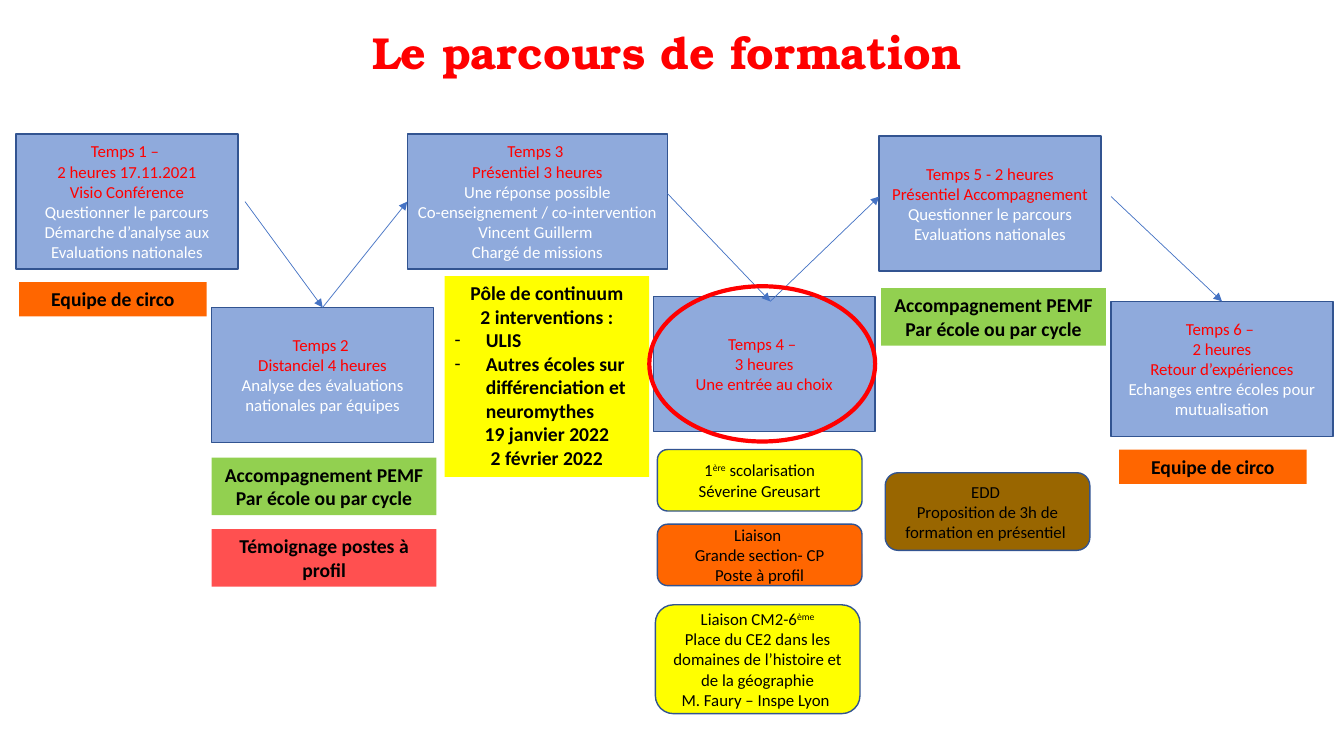
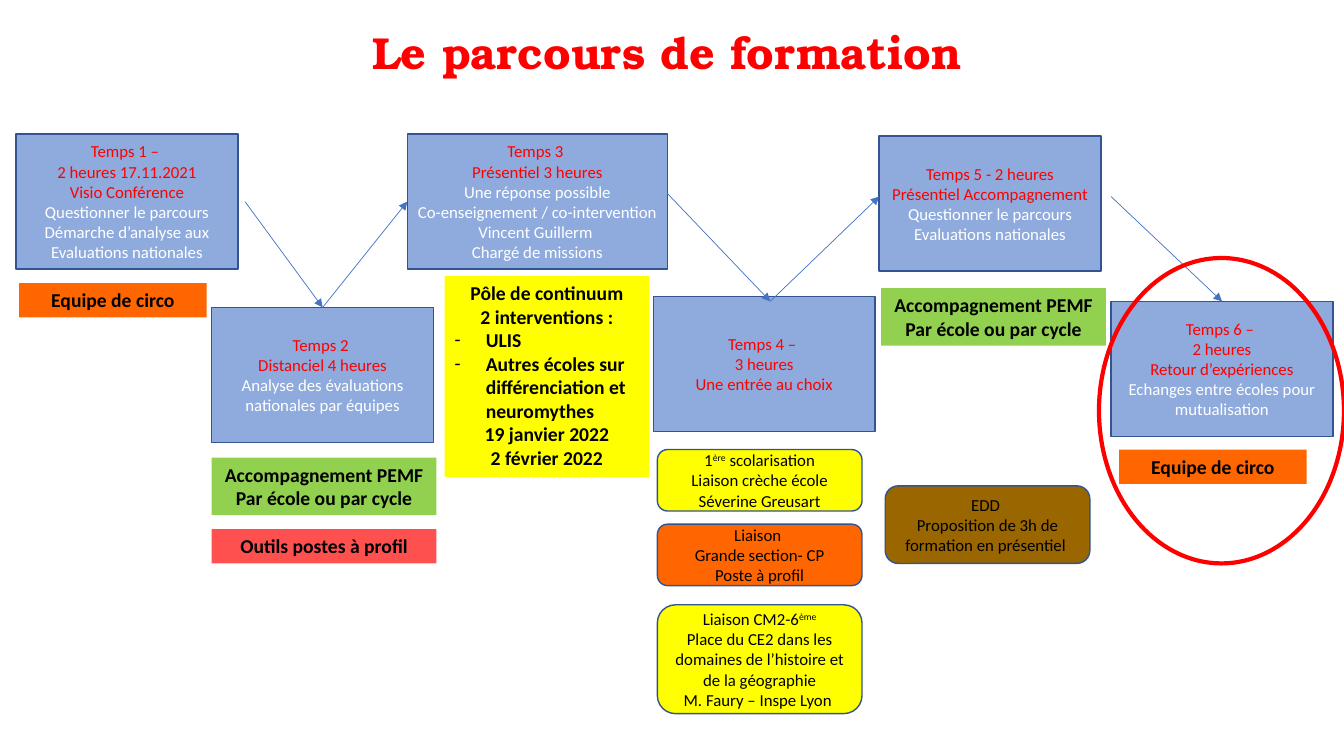
from dataclasses import dataclass

from lxml import etree
from pptx import Presentation
from pptx.dml.color import RGBColor
from pptx.enum.shapes import MSO_CONNECTOR, MSO_SHAPE
from pptx.enum.text import MSO_ANCHOR, MSO_AUTO_SIZE, PP_ALIGN
from pptx.oxml.ns import qn
from pptx.util import Inches, Pt

RECT, ROUNDED, OVAL = MSO_SHAPE.RECTANGLE, MSO_SHAPE.ROUNDED_RECTANGLE, MSO_SHAPE.OVAL
STRAIGHT = MSO_CONNECTOR.STRAIGHT
CENTER, LEFT = PP_ALIGN.CENTER, PP_ALIGN.LEFT
TOP, MIDDLE = MSO_ANCHOR.TOP, MSO_ANCHOR.MIDDLE
NO_AUTOFIT, GROW = MSO_AUTO_SIZE.NONE, MSO_AUTO_SIZE.SHAPE_TO_FIT_TEXT
TITLE_ONLY = 5


@dataclass(frozen=True)
class Theme:
    red: str = "FF0000"
    white: str = "FFFFFF"
    black: str = "000000"
    step: str = "8FAADC"
    outline: str = "325491"
    arrow: str = "4472C4"
    yellow: str = "FFFF00"
    orange: str = "FF6600"
    green: str = "92D050"
    coral: str = "FF5050"
    brown: str = "996600"
    title_font: str = "TeX Gyre Bonum"
    body_font: str = "Calibri"
    title_size: float = 32
    label_size: float = 14
    body_size: float = 12
    outline_width: float = 1
    arrow_width: float = 0.5
    highlight_width: float = 3


THEME = Theme()
TITLE = "Le parcours de formation"
TITLE_BOX = (0.87, 0.19, 11.5, 0.72)
STEP_WIDTH, STEP_HEIGHT = 2.2, 1.34
CARD_WIDTH = 2.03
BULLET_INDENT = 0.31

STEPS = [
    (0.16, 1.33, STEP_WIDTH,
     ["Temps 1 – ", "2 heures 17.11.2021", "Visio Conférence"],
     ["Questionner le parcours", "Démarche d’analyse aux Evaluations nationales"]),
    (2.1, 3.05, STEP_WIDTH,
     ["Temps 2 ", "Distanciel 4 heures"],
     ["Analyse des évaluations nationales par équipes"]),
    (4.04, 1.33, 2.58,
     ["Temps 3 ", "Présentiel 3 heures"],
     ["Une réponse possible", "Co-enseignement / co-intervention",
      "Vincent Guillerm ", "Chargé de missions"]),
    (6.48, 2.94, STEP_WIDTH,
     ["Temps 4 – ", "3 heures", "Une entrée au choix"], []),
    (8.72, 1.35, STEP_WIDTH,
     ["Temps 5 - 2 heures", "Présentiel Accompagnement"],
     ["Questionner le parcours", "Evaluations nationales"]),
    (11.02, 2.99, STEP_WIDTH,
     ["Temps 6 – ", "2 heures", "Retour d’expériences"],
     ["Echanges entre écoles pour mutualisation"]),
]

ARROW_ROUTES = [
    [(2.43, 2), (3.2, 3.05), (4.04, 2)],
    [(6.62, 1.92), (7.64, 2.99), (8.72, 1.95)],
    [(11.02, 1.95), (12.12, 2.99)],
]

PEMF = ["Accompagnement PEMF", "Par école ou par cycle"]
CIRCO = ["Equipe de circo"]
CONTINUUM = ["Pôle de continuum", "2 interventions :", "- ULIS",
             "- Autres écoles sur différenciation et neuromythes",
             "19 janvier 2022", "2 février 2022"]
LIAISON_CP = ["Liaison ", "Grande section- CP", "Poste à profil"]
LIAISON_CM2 = ["Liaison CM2-6^ème^",
               "Place du CE2 dans les domaines de l’histoire et de la géographie",
               "M. Faury – Inspe Lyon "]
EDD = ["EDD ", "Proposition de 3h de formation en présentiel "]

SHARED_LABELS = [
    ((2.1, 4.54, 2.23, 0.57), THEME.green, PEMF),
    ((4.41, 2.74, 2.03, 1.99), THEME.yellow, CONTINUUM),
    ((8.74, 2.86, 2.23, 0.57), THEME.green, PEMF),
    ((11.1, 4.46, 1.86, 0.34), THEME.orange, CIRCO),
]

SLIDES = [
    {
        "schooling": ["1^ère^ scolarisation", "Séverine Greusart"],
        "profile": ["Témoignage postes à profil"],
        "profile_height": 0.57,
        "circo_top": 2.8,
        "cm2_left": 6.5,
        "edd_top": 4.69,
        "highlight": (6.44, 2.84, 2.24, 1.54),
    },
    {
        "schooling": ["1^ère^ scolarisation", "Liaison crèche école", "Séverine Greusart"],
        "profile": ["Outils postes à profil"],
        "profile_height": 0.34,
        "circo_top": 2.81,
        "cm2_left": 6.52,
        "edd_top": 4.82,
        "highlight": (10.9, 2.56, 2.43, 3.03),
    },
]


def rgb(color):
    return RGBColor.from_string(color)


def apply(target, formats):
    for name, value in formats.items():
        setattr(target, name, value)


def font_format(size, font=THEME.body_font, bold=False):
    return {"size": Pt(size), "name": font, "bold": bold}


def add_bullet(paragraph):
    properties = paragraph._p.get_or_add_pPr()
    properties.set("marL", str(Inches(BULLET_INDENT)))
    properties.set("indent", str(-Inches(BULLET_INDENT)))
    etree.SubElement(properties, qn("a:buFont"), typeface=THEME.body_font)
    etree.SubElement(properties, qn("a:buChar"), char="-")


def write_line(paragraph, text, color, formats):
    bulleted = text.startswith("- ")
    paragraph.alignment = LEFT if bulleted else CENTER
    if bulleted:
        add_bullet(paragraph)
    for index, part in enumerate(text.removeprefix("- ").split("^")):
        if not part:
            continue
        run = paragraph.add_run()
        run.text = part
        apply(run.font, formats)
        run.font.color.rgb = rgb(color)
        if index % 2:
            run._r.get_or_add_rPr().set("baseline", "30000")


def add_box(slide, kind, box, fill=None, outline=None, width=THEME.outline_width):
    shape = slide.shapes.add_shape(kind, *map(Inches, box))
    shape.shadow.inherit = False
    if fill:
        shape.fill.solid()
        shape.fill.fore_color.rgb = rgb(fill)
    else:
        shape.fill.background()
    if outline:
        shape.line.color.rgb = rgb(outline)
        shape.line.width = Pt(width)
    else:
        shape.line.fill.background()
    return shape


def fill_text(shape, lines, formats, anchor=MIDDLE, auto_size=NO_AUTOFIT):
    frame = shape.text_frame
    apply(frame, {"word_wrap": True, "vertical_anchor": anchor, "auto_size": auto_size})
    for index, (text, color) in enumerate(lines):
        paragraph = frame.add_paragraph() if index else frame.paragraphs[0]
        write_line(paragraph, text, color, formats)


def colored(texts, color):
    return [(text, color) for text in texts]


def add_title(slide):
    title = slide.shapes.title
    places = map(Inches, TITLE_BOX)
    apply(title, dict(zip(("left", "top", "width", "height"), places)))
    fill_text(title, colored([TITLE], THEME.red),
              font_format(THEME.title_size, THEME.title_font, True))
    title.text_frame.paragraphs[0].line_spacing = 0.9


def add_step(slide, left, top, width, headings, details):
    step = add_box(slide, RECT, (left, top, width, STEP_HEIGHT), THEME.step, THEME.outline)
    lines = colored(headings, THEME.red) + colored(details, THEME.white)
    fill_text(step, lines, font_format(THEME.body_size))


def add_card(slide, box, fill, texts):
    card = add_box(slide, ROUNDED, box, fill, THEME.outline)
    fill_text(card, colored(texts, THEME.black), font_format(THEME.body_size))


def add_label(slide, box, fill, texts):
    label = add_box(slide, RECT, box, fill)
    fill_text(label, colored(texts, THEME.black),
              font_format(THEME.label_size, bold=True), TOP, GROW)


def add_arrow(slide, start, end):
    arrow = slide.shapes.add_connector(STRAIGHT, *map(Inches, start + end))
    arrow.line.color.rgb = rgb(THEME.arrow)
    arrow.line.width = Pt(THEME.arrow_width)
    etree.SubElement(arrow.line._get_or_add_ln(), qn("a:tailEnd"), type="triangle")
    etree.SubElement(arrow._element.spPr, qn("a:effectLst"))


def build_slide(deck, content):
    slide = deck.slides.add_slide(deck.slide_layouts[TITLE_ONLY])
    add_title(slide)
    for step in STEPS:
        add_step(slide, *step)

    cards = [
        ((6.52, 4.46, CARD_WIDTH, 0.61), THEME.yellow, content["schooling"]),
        ((content["cm2_left"], 6, CARD_WIDTH, 1.08), THEME.yellow, LIAISON_CM2),
        ((6.52, 5.2, CARD_WIDTH, 0.61), THEME.orange, LIAISON_CP),
        ((8.78, content["edd_top"], CARD_WIDTH, 0.77), THEME.brown, EDD),
    ]
    for card in cards:
        add_card(slide, *card)

    for route in ARROW_ROUTES:
        for start, end in zip(route, route[1:]):
            add_arrow(slide, start, end)

    labels = SHARED_LABELS + [
        ((0.19, content["circo_top"], 1.86, 0.34), THEME.orange, CIRCO),
        ((2.1, 5.25, 2.23, content["profile_height"]), THEME.coral, content["profile"]),
    ]
    for label in labels:
        add_label(slide, *label)

    add_box(slide, OVAL, content["highlight"], outline=THEME.red, width=THEME.highlight_width)


def main():
    deck = Presentation()
    deck.slide_width, deck.slide_height = Inches(13.33), Inches(7.5)
    for content in SLIDES:
        build_slide(deck, content)
    deck.save("out.pptx")


if __name__ == "__main__":
    main()
